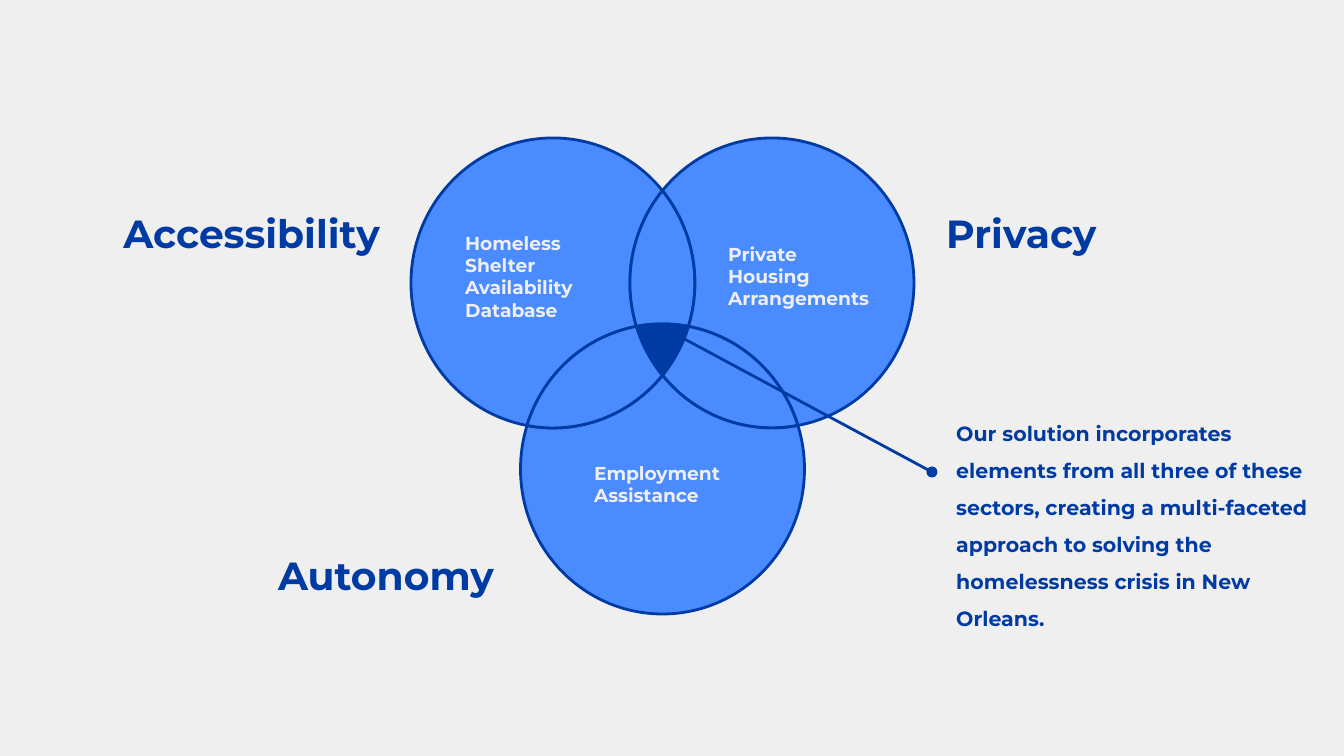
import math

from lxml import etree
from pptx import Presentation
from pptx import util as u
from pptx.dml.color import RGBColor
from pptx.enum import shapes, text
from pptx.oxml import ns

SCALE = u.Inches(10) / 1344
NAVY = RGBColor(0x00, 0x3B, 0xA3)
BLUE = RGBColor(0x4A, 0x8C, 0xFF)
PALE = RGBColor(0xEF, 0xEF, 0xEF)
FONT = "Montserrat"
LEFT, RIGHT = text.PP_ALIGN.LEFT, text.PP_ALIGN.RIGHT


def px(length):
    """Turn pixels into EMU."""
    return u.Emu(round(length * SCALE))


def add_label(slide, box, words, size, color, align=LEFT, spacing=1.0):
    """Place a bold, wrapped text box in the given box."""
    shape = slide.shapes.add_textbox(*map(px, box))
    frame = shape.text_frame
    frame.word_wrap = True
    frame.margin_left = frame.margin_right = u.Inches(0.1)
    frame.margin_top = frame.margin_bottom = u.Inches(0.1)
    frame.text = words
    paragraph = frame.paragraphs[0]
    paragraph.alignment = align
    paragraph.line_spacing = spacing
    font = paragraph.runs[0].font
    font.name, font.size, font.bold = FONT, u.Pt(size), True
    font.color.rgb = color


def crossing(first, second, radii, side):
    """Find where two equal ellipses cross, side 1 outside and -1 inside the trio."""
    dx, dy = ((b - a) / (2 * r) for a, b, r in zip(first, second, radii))
    half = math.hypot(dx, dy)
    reach = side * math.sqrt(1 - half ** 2) / half
    return (first[0] + radii[0] * (dx + reach * dy),
            first[1] + radii[1] * (dy - reach * dx))


def arc(center, radii, start, end, long_way=False):
    """Return Bezier curves for an elliptical arc, split at its extreme points."""
    begin, finish = (math.atan2((y - center[1]) / radii[1], (x - center[0]) / radii[0])
                     for x, y in (start, end))
    sweep = (finish - begin + math.pi) % math.tau - math.pi
    if long_way:
        sweep -= math.copysign(math.tau, sweep)
    finish = begin + sweep
    low, high = sorted((begin, finish))
    quarters = [n * math.pi / 2 for n in range(-8, 9) if low < n * math.pi / 2 < high]
    angles = sorted([begin, finish, *quarters], reverse=sweep < 0)

    def locate(angle, tangent=0):
        """Return the point at an angle, moved along the tangent."""
        return (center[0] + radii[0] * (math.cos(angle) - tangent * math.sin(angle)),
                center[1] + radii[1] * (math.sin(angle) + tangent * math.cos(angle)))

    curves = []
    for a, b in zip(angles, angles[1:]):
        pull = 4 / 3 * math.tan((b - a) / 4)
        curves.append((locate(a), locate(a, pull), locate(b, -pull), locate(b)))
    return curves


def add_region(group, curves, fill):
    """Add one outlined region bounded by Bezier curves."""
    corners = [(px(x), px(y)) for x, y in (curve[0] for curve in curves)]
    builder = group.shapes.build_freeform(*corners[0], scale=1.0)
    builder.add_line_segments(corners[1:] + corners[:1], close=True)
    shape = builder.convert_to_shape()
    left, top = (min(values) for values in zip(*corners))
    segments = list(shape._element.iter(ns.qn("a:lnTo")))
    for segment, curve in zip(segments, curves):
        segment.tag = ns.qn("a:cubicBezTo")
        for index, (x, y) in enumerate(curve[1:3]):
            handle = etree.Element(ns.qn("a:pt"), x=str(px(x) - left), y=str(px(y) - top))
            segment.insert(index, handle)
    shape.shadow.inherit = False
    shape.fill.solid()
    shape.fill.fore_color.rgb = fill
    shape.line.color.rgb = NAVY
    shape.line.width = u.Pt(1.5)


def add_venn(slide, box):
    """Draw three overlapping ellipses as seven regions."""
    left, top, width, height = box
    radii = (142, 145)
    centers = [(left + radii[0], top + radii[1]),
               (left + width - radii[0], top + radii[1]),
               (left + width / 2, top + height - radii[1])]
    outer, inner = ([crossing(centers[i], centers[(i + 1) % 3], radii, side)
                     for i in range(3)] for side in (1, -1))
    group = slide.shapes.add_group_shape()
    for i in range(3):
        j, k = (i + 1) % 3, (i + 2) % 3
        add_region(group, arc(centers[i], radii, outer[i], outer[k], True)
                   + arc(centers[k], radii, outer[k], inner[j])
                   + arc(centers[j], radii, inner[j], outer[i]), BLUE)
        add_region(group, arc(centers[j], radii, outer[i], inner[j])
                   + arc(centers[k], radii, inner[j], inner[k])
                   + arc(centers[i], radii, inner[k], outer[i]), BLUE)
    core = [curve for i in range(3)
            for curve in arc(centers[i], radii, inner[i - 1], inner[i])]
    add_region(group, core, NAVY)


def add_captions(slide, box):
    """Place the three captions inside the diagram."""
    left, top = box[:2]
    for x, y, width, height, words in (
            (41, 80, 165, 108, "Homeless Shelter Availability Database"),
            (304, 91, 180, 95, "Private Housing Arrangements"),
            (170, 310, 165, 67, "Employment Assistance")):
        add_label(slide, (left + x, top + y, width, height), words, 10, PALE)


def add_headings(slide, box):
    """Place the three sector names around the diagram."""
    left, top, width, height = box
    for x, y, words, align in ((0, 0, "Accessibility", RIGHT),
                               (114, 342, "Autonomy", RIGHT),
                               (934, 0, "Privacy", LEFT)):
        add_label(slide, (left + x, top + y, width, height), words, 21, NAVY, align)


def add_callout(slide, box):
    """Place the summary and the dotted leader from the shared core."""
    left, top = box[:2]
    leader = slide.shapes.add_connector(
        shapes.MSO_CONNECTOR.STRAIGHT,
        px(left - 264), px(top - 59), px(left - 11), px(top + 77))
    leader.line.color.rgb = NAVY
    leader.line.width = u.Pt(1.5)
    etree.SubElement(leader.line._get_or_add_ln(), ns.qn("a:tailEnd"), type="oval")
    etree.SubElement(leader._element.spPr, ns.qn("a:effectLst"))
    add_label(slide, box, "Our solution incorporates elements from all three of these "
              "sectors, creating a multi-faceted approach to solving the "
              "homelessness crisis in New Orleans.", 11, NAVY, spacing=1.5)


def main():
    """Build and save the slide."""
    presentation = Presentation()
    presentation.slide_width, presentation.slide_height = px(1344), px(756)
    slide = presentation.slides.add_slide(presentation.slide_layouts[6])
    slide.background.fill.solid()
    slide.background.fill.fore_color.rgb = PALE
    venn = (411, 138, 503, 476)
    add_venn(slide, venn)
    add_headings(slide, (-1, 196, 394, 77))
    add_callout(slide, (943, 395, 401, 246))
    add_captions(slide, venn)
    presentation.save("out.pptx")


if __name__ == "__main__":
    main()
